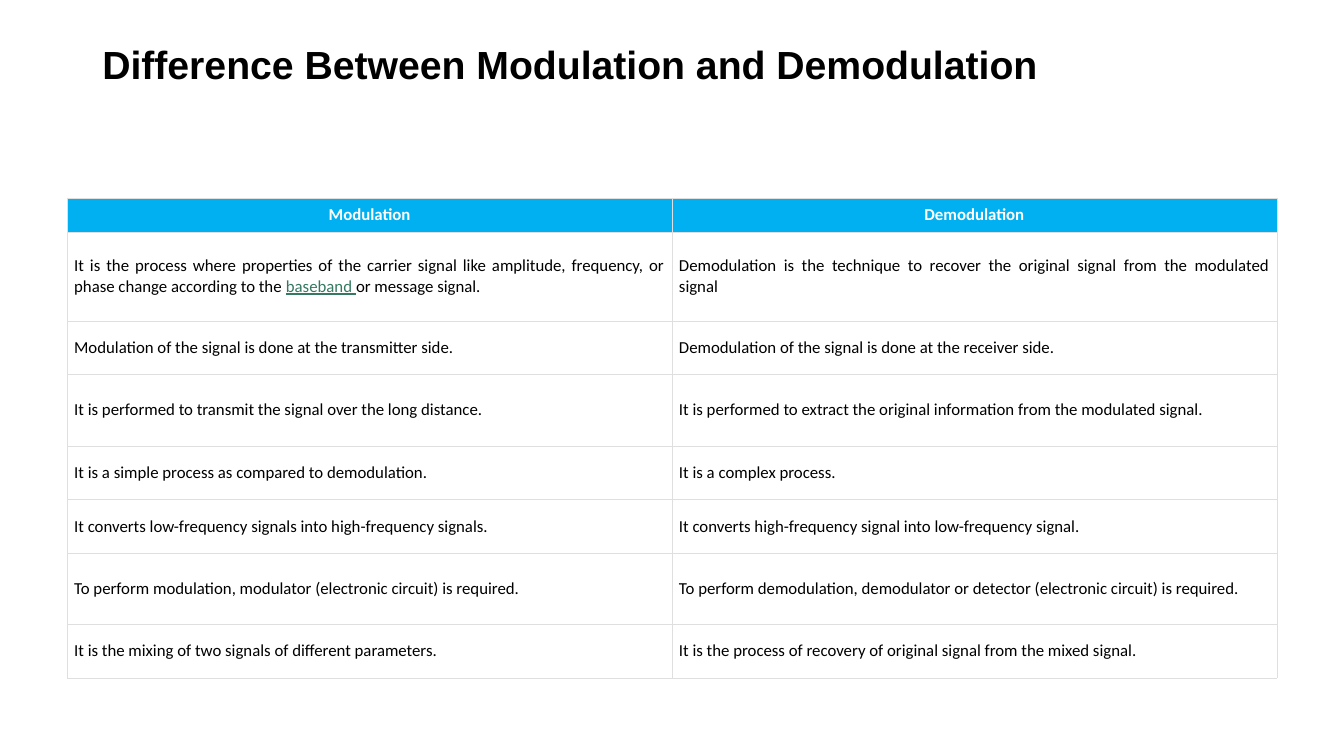
from lxml.etree import SubElement
from pptx import Presentation
from pptx.dml.color import RGBColor
from pptx.enum.text import MSO_ANCHOR, PP_ALIGN
from pptx.oxml.ns import qn
from pptx.util import Pt

BLACK, WHITE, SKY, GREEN, GREY = "000000", "FFFFFF", "00B0F0", "357960", "DFDFDF"
ROW_HEIGHTS = [24, 63.5, 38.4, 50.9, 38.4, 38.4, 50.9, 38.4]
COLUMN_WIDTH = 432

HEADINGS = ("Modulation", "Demodulation")
DIFFERENCES = [
    ("It is the process where properties of the carrier signal like amplitude, "
     "frequency, or phase change according to the *baseband *or message signal.",
     "Demodulation is the technique to recover the original signal from the modulated signal"),
    ("Modulation of the signal is done at the transmitter side.",
     "Demodulation of the signal is done at the receiver side."),
    ("It is performed to transmit the signal over the long distance.",
     "It is performed to extract the original information from the modulated signal."),
    ("It is a simple process as compared to demodulation.",
     "It is a complex process."),
    ("It converts low-frequency signals into high-frequency signals.",
     "It converts high-frequency signal into low-frequency signal."),
    ("To perform modulation, modulator (electronic circuit) is required.",
     "To perform demodulation, demodulator or detector (electronic circuit) is required."),
    ("It is the mixing of two signals of different parameters.",
     "It is the process of recovery of original signal from the mixed signal."),
]


def colour(value):
    return RGBColor.from_string(value)


def write_text(para, text, *, size, font, color=BLACK, bold=False, align=PP_ALIGN.LEFT,
               line_spacing=None, space_after=0):
    """Write text into a paragraph; parts between asterisks become underlined green."""
    para.alignment = align
    para.line_spacing = line_spacing
    para.space_after = Pt(space_after)
    for index, part in enumerate(text.split("*")):
        marked = index % 2 == 1
        span = para.add_run()
        span.text = part
        span.font.name = font
        span.font.size = Pt(size)
        span.font.bold = bold
        span.font.underline = marked
        span.font.color.rgb = colour(GREEN if marked else color)


def add_title(page, text):
    box = page.shapes.add_textbox(Pt(66), Pt(28.75), Pt(828), Pt(104.4))
    box.text_frame.word_wrap = True
    write_text(box.text_frame.paragraphs[0], text, size=28, font="Arial", bold=True,
               line_spacing=0.9)


def set_borders(cell, color, width):
    properties = cell._tc.get_or_add_tcPr()
    for side in ("lnL", "lnR", "lnT", "lnB"):
        line = SubElement(properties, qn(f"a:{side}"), w=str(Pt(width)))
        fill = SubElement(line, qn("a:solidFill"))
        SubElement(fill, qn("a:srgbClr"), val=color)


def fill_cell(cell, text, *, fill, margins, **text_format):
    """Format one cell; margins are the horizontal and the vertical inset."""
    set_borders(cell, GREY, 0.18)
    cell.fill.solid()
    cell.fill.fore_color.rgb = colour(fill)
    cell.vertical_anchor = MSO_ANCHOR.MIDDLE
    cell.margin_left = cell.margin_right = Pt(margins[0])
    cell.margin_top = cell.margin_bottom = Pt(margins[1])
    write_text(cell.text_frame.paragraphs[0], text, size=12, font="Calibri",
               space_after=7.5, **text_format)


def add_comparison(page, headings, differences):
    frame = page.shapes.add_table(len(ROW_HEIGHTS), len(headings), Pt(48), Pt(141.2),
                                  Pt(COLUMN_WIDTH * len(headings)), Pt(sum(ROW_HEIGHTS)))
    table = frame.table
    for column in table.columns:
        column.width = Pt(COLUMN_WIDTH)
    for row, height in zip(table.rows, ROW_HEIGHTS):
        row.height = Pt(height)
    for cell, text in zip(table.rows[0].cells, headings):
        fill_cell(cell, text, fill=SKY, margins=(5, 5), color=WHITE, bold=True,
                  align=PP_ALIGN.CENTER)
    for row_number, texts in enumerate(differences, start=1):
        for cell, text in zip(table.rows[row_number].cells, texts):
            fill_cell(cell, text, fill=WHITE, margins=(5, 7), align=PP_ALIGN.JUSTIFY)


def main():
    deck = Presentation()
    deck.slide_width, deck.slide_height = Pt(960), Pt(540)
    page = deck.slides.add_slide(deck.slide_layouts[6])
    add_title(page, "Difference Between Modulation and Demodulation")
    add_comparison(page, HEADINGS, DIFFERENCES)
    deck.save("out.pptx")


if __name__ == "__main__":
    main()
